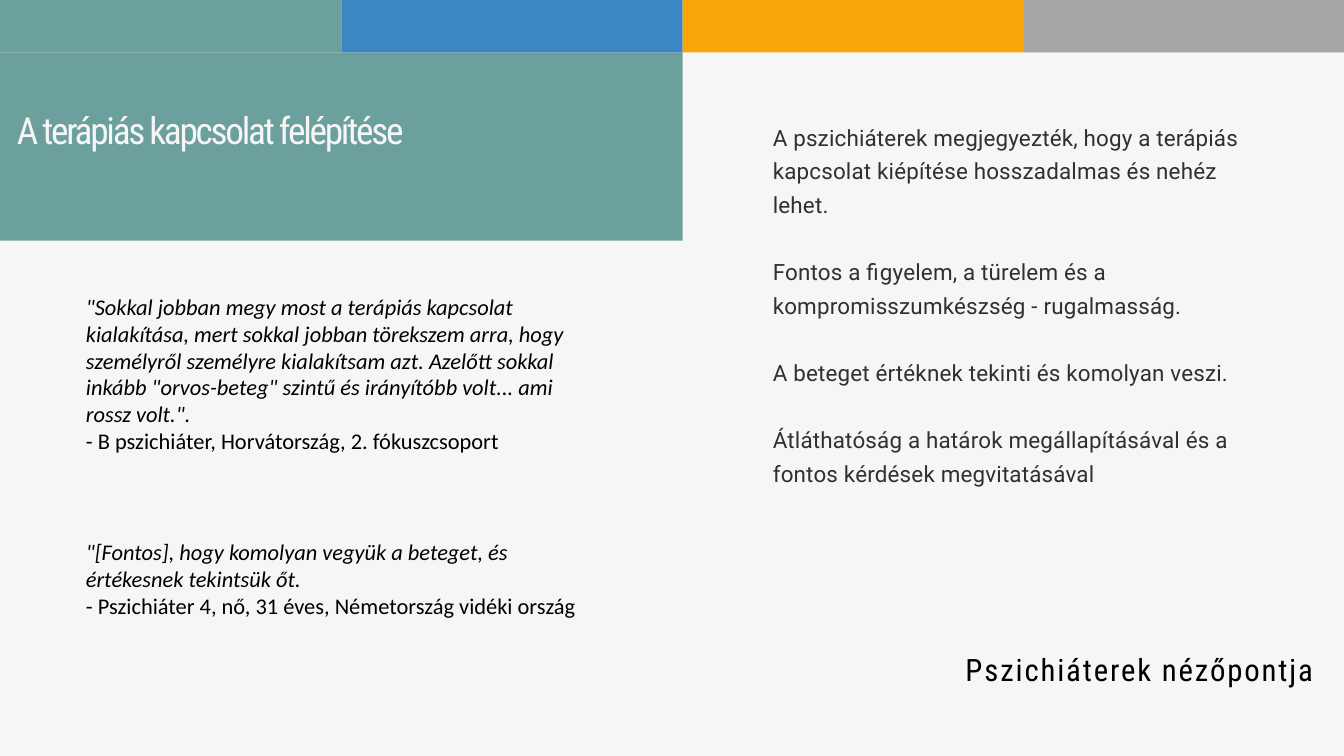
from dataclasses import dataclass

import lxml.etree
import pptx
import pptx.dml.color
import pptx.enum.shapes
import pptx.enum.text
import pptx.oxml.ns
import pptx.util

Inches = pptx.util.Inches
Pt = pptx.util.Pt
Align = pptx.enum.text.PP_ALIGN


@dataclass(frozen=True)
class Theme:
    paper: str = "F6F6F6"
    teal: str = "6CA09D"
    blue: str = "3B87C3"
    amber: str = "F7A70A"
    grey: str = "A6A6A6"
    ink: str = "303030"
    black: str = "000000"
    title_size: float = 40
    text_size: float = 24
    caption_size: float = 33
    title_font: str = "Roboto Condensed"
    text_font: str = "Roboto"
    quote_font: str = "Calibri"


@dataclass(frozen=True)
class Box:
    left: float
    top: float
    width: float
    height: float

    def lengths(self) -> tuple:
        return tuple(Inches(v) for v in (self.left, self.top, self.width, self.height))


@dataclass(frozen=True)
class Quote:
    box: Box
    words: str
    speaker: str


THEME = Theme()
BAND_W, BAND_H = 5.08, 0.78

POINTS = [
    "A pszichiáterek megjegyezték, hogy a terápiás kapcsolat kiépítése hosszadalmas és nehéz lehet.",
    "Fontos a figyelem, a türelem és a kompromisszumkészség - rugalmasság.",
    "A beteget értéknek tekinti és komolyan veszi.",
    "Átláthatóság a határok megállapításával és a fontos kérdések megvitatásával",
]
QUOTES = [
    Quote(
        Box(1.18, 4.31, 7.7, 2.52),
        '"Sokkal jobban megy most a terápiás kapcsolat kialakítása, mert sokkal jobban '
        "törekszem arra, hogy személyről személyre kialakítsam azt. Azelőtt sokkal inkább "
        '"orvos-beteg" szintű és irányítóbb volt... ami rossz volt.".',
        "- B pszichiáter, Horvátország, 2. fókuszcsoport",
    ),
    Quote(
        Box(1.18, 7.96, 7.7, 1.31),
        '"[Fontos], hogy komolyan vegyük a beteget, és értékesnek tekintsük őt.',
        "- Pszichiáter 4, nő, 31 éves, Németország vidéki ország",
    ),
]


def color(code: str) -> pptx.dml.color.RGBColor:
    return pptx.dml.color.RGBColor.from_string(code)


def add_block(s, box: Box, fill: str) -> None:
    sp = s.shapes.add_shape(pptx.enum.shapes.MSO_SHAPE.RECTANGLE, *box.lengths())
    sp.shadow.inherit = False
    sp.fill.solid()
    sp.fill.fore_color.rgb = color(fill)
    sp.line.fill.background()


def set_frame(sp, box: Box, inset: bool = False):
    """Place a text shape and return its frame, ready for text."""
    sp.left, sp.top, sp.width, sp.height = box.lengths()
    tf = sp.text_frame
    tf.word_wrap = True
    tf.auto_size = pptx.enum.text.MSO_AUTO_SIZE.SHAPE_TO_FIT_TEXT
    tf.vertical_anchor = pptx.enum.text.MSO_ANCHOR.TOP
    if not inset:
        tf.margin_left = tf.margin_top = tf.margin_right = tf.margin_bottom = 0
    return tf


def add_text(tf, text: str, *, font: str, size: float, fill: str, italic: bool = False,
             spacing: float = 0, line: float = 0, before: float = 0,
             align: Align = Align.LEFT) -> None:
    """Write one paragraph, reusing the frame's empty first one."""
    p = tf.paragraphs[0] if not tf.text else tf.add_paragraph()
    p.alignment = align
    p.space_before = Pt(before)
    if line:
        p.line_spacing = Pt(line)
    pPr = p._p.get_or_add_pPr()
    pPr.set("marL", "0")
    pPr.set("indent", "0")
    lxml.etree.SubElement(pPr, pptx.oxml.ns.qn("a:buNone"))
    r = p.add_run()
    r.text = text
    r.font.name = font
    r.font.size = Pt(size)
    r.font.italic = italic
    r.font.color.rgb = color(fill)
    if spacing:
        r._r.get_or_add_rPr().set("spc", str(round(spacing * 100)))


def main() -> None:
    prs = pptx.Presentation()
    prs.slide_width, prs.slide_height = Inches(20), Inches(11.25)
    s = prs.slides.add_slide(prs.slide_layouts[1])
    s.background.fill.solid()
    s.background.fill.fore_color.rgb = color(THEME.paper)
    title, body = s.shapes.title, s.placeholders[1]

    # Title panel and the row of bands
    add_block(s, Box(0, BAND_H, 2 * BAND_W, 2.8), THEME.teal)
    for i, fill in enumerate((THEME.teal, THEME.blue, THEME.amber, THEME.grey)):
        add_block(s, Box(i * BAND_W, 0, BAND_W, BAND_H), fill)

    # Title and list, brought in front of the panel
    for sp in (title, body):
        sp.element.getparent().append(sp.element)
    tf = set_frame(title, Box(0.25, 1.11, 9.56, 1.02))
    add_text(tf, "A terápiás kapcsolat felépítése", font=THEME.title_font,
             size=THEME.title_size, fill=THEME.paper, spacing=-2.4, line=83.2)
    tf = set_frame(body, Box(11.5, 1.74, 7.45, 7.03))
    for i, point in enumerate(POINTS):
        add_text(tf, point, font=THEME.text_font, size=THEME.text_size, fill=THEME.ink,
                 spacing=0.2, line=36, before=36 if i else 0)

    # Caption
    box = Box(11.5, 9.59, 8.05, 1.25)
    tf = set_frame(s.shapes.add_textbox(*box.lengths()), box)
    add_text(tf, "Pszichiáterek nézőpontja", font=THEME.title_font, size=THEME.caption_size,
             fill=THEME.black, spacing=2, line=46.2, align=Align.RIGHT)

    # Quotes
    for quote in QUOTES:
        tf = set_frame(s.shapes.add_textbox(*quote.box.lengths()), quote.box, inset=True)
        for text, italic in ((quote.words, True), (quote.speaker, False)):
            add_text(tf, text, font=THEME.quote_font, size=THEME.text_size,
                     fill=THEME.black, italic=italic)

    prs.save("out.pptx")


if __name__ == "__main__":
    main()
